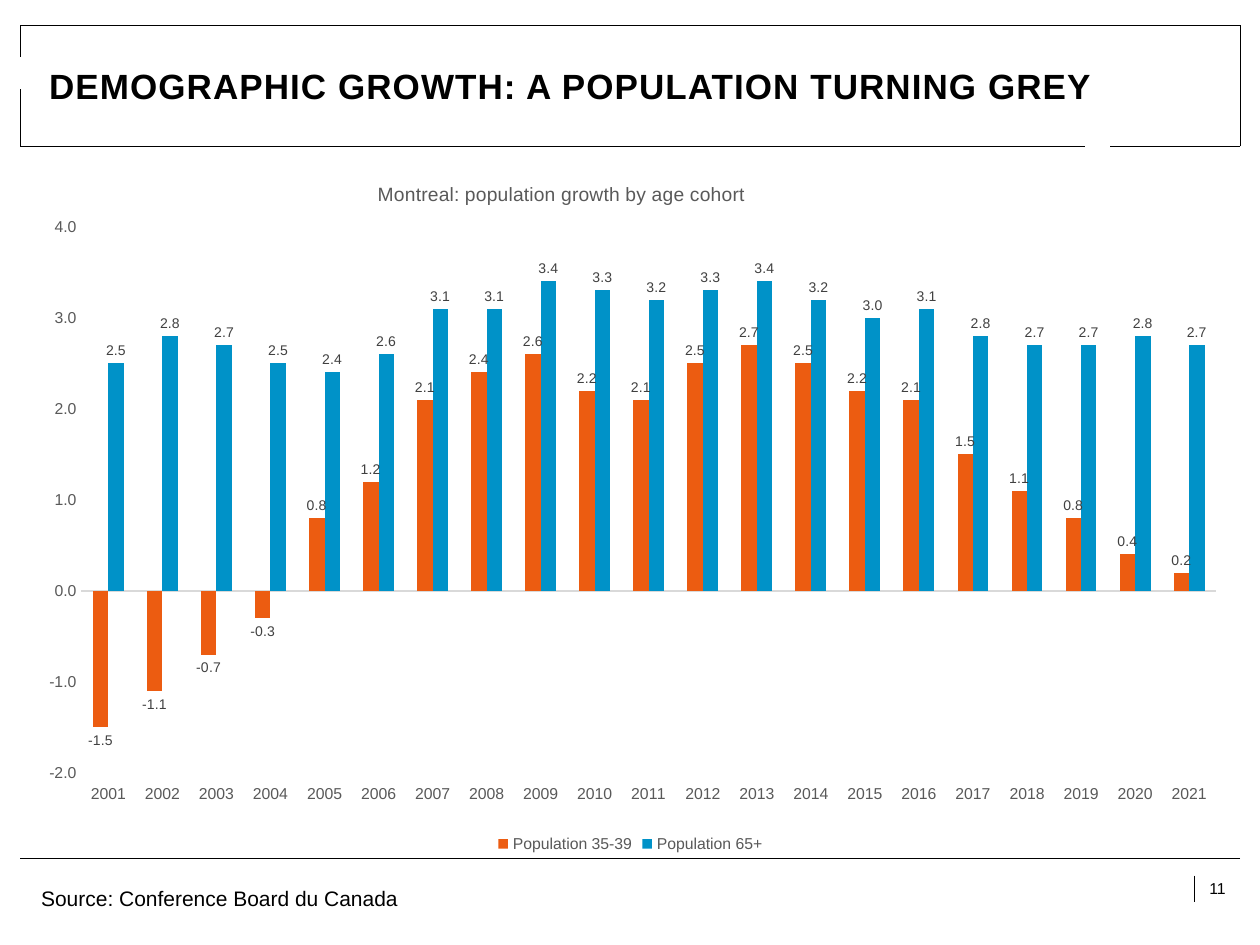
from lxml import etree
from pptx import Presentation
from pptx import util as u
from pptx.chart import data
from pptx.dml import color
from pptx.enum import chart as charts, shapes, text
from pptx.oxml import ns

COLORS = {"black": "000000", "grey": "595959", "label": "404040",
          "axis": "D9D9D9", "orange": "EC5C11", "blue": "0092C8"}
LEFT, RIGHT, TOP, BOTTOM, FOOTER = 0.41, 25, 0.51, 2.95, 17.3


def style_font(font, size, name):
    font.name = "Arial"
    font.size = u.Pt(size)
    font.color.rgb = color.RGBColor.from_string(COLORS[name])


def set_layout(element, inner=False, **fractions):
    for old in element.findall(ns.qn("c:layout")):
        element.remove(old)
    layout = etree.Element(ns.qn("c:layout"))
    manual = etree.SubElement(layout, ns.qn("c:manualLayout"))
    if inner:
        etree.SubElement(manual, ns.qn("c:layoutTarget"), val="inner")
    for side in "xy":
        etree.SubElement(manual, ns.qn(f"c:{side}Mode"), val="edge")
    for key, value in fractions.items():
        etree.SubElement(manual, ns.qn(f"c:{key}"), val=str(value))
    element.insert(0 if inner else 1, layout)


presentation = Presentation()
presentation.slide_width, presentation.slide_height = u.Cm(25.4), u.Cm(19.05)
slide = presentation.slides.add_slide(presentation.slide_layouts[5])

frame_lines = [
    (RIGHT, FOOTER, LEFT, FOOTER),
    (24.08, 17.65, 24.08, 18.19),
    (LEFT, BOTTOM, 21.87, BOTTOM),
    (LEFT, TOP, RIGHT, TOP),
    (LEFT, TOP, LEFT, 1.14),
    (LEFT, 1.8, LEFT, BOTTOM),
    (RIGHT, BOTTOM, RIGHT, TOP),
    (22.38, BOTTOM, RIGHT, BOTTOM),
]
for ends in frame_lines:
    line = slide.shapes.add_connector(
        shapes.MSO_CONNECTOR.STRAIGHT, *[u.Cm(end) for end in ends])
    line.line.color.rgb = color.RGBColor.from_string(COLORS["black"])
    line.line.width = u.Pt(0.75)
    etree.SubElement(line._element.spPr, ns.qn("a:effectLst"))

title = slide.shapes.title
title.left, title.top, title.width, title.height = [
    u.Cm(value) for value in (LEFT, TOP, 24.6, 2.42)]
frame = title.text_frame
frame.text = "DEMOGRAPHIC GROWTH: A POPULATION TURNING GREY"
frame.word_wrap = True
frame.auto_size = text.MSO_AUTO_SIZE.NONE
frame.vertical_anchor = text.MSO_ANCHOR.MIDDLE
frame.margin_left = frame.margin_right = u.Cm(0.58)
frame.margin_top = frame.margin_bottom = u.Cm(0.23)
paragraph = frame.paragraphs[0]
paragraph.alignment = text.PP_ALIGN.LEFT
style_font(paragraph.font, 20, "black")
paragraph.font.bold = True
paragraph.runs[0].font._element.set("spc", "60")

chart_data = data.CategoryChartData(number_format="#,##0.0")
chart_data.categories = [str(year) for year in range(2001, 2022)]
chart_data.add_series("Population 35-39", [
    -1.5, -1.1, -0.7, -0.3, 0.8, 1.2, 2.1, 2.4, 2.6, 2.2, 2.1,
    2.5, 2.7, 2.5, 2.2, 2.1, 1.5, 1.1, 0.8, 0.4, 0.2])
chart_data.add_series("Population 65+", [
    2.5, 2.8, 2.7, 2.5, 2.4, 2.6, 3.1, 3.1, 3.4, 3.3, 3.2,
    3.3, 3.4, 3.2, 3.0, 3.1, 2.8, 2.7, 2.7, 2.8, 2.7])
chart = slide.shapes.add_chart(
    charts.XL_CHART_TYPE.COLUMN_CLUSTERED,
    u.Cm(LEFT), u.Cm(3), u.Cm(24.6), u.Cm(14.3), chart_data).chart
style_font(chart.font, 10, "black")

chart.has_title = True
chart.chart_title.text_frame.text = "Montreal: population growth by age cohort"
title_font = chart.chart_title.text_frame.paragraphs[0].font
style_font(title_font, 11, "grey")
title_font.bold = False
set_layout(chart.chart_title._element, x=0.29, y=0.04)

chart.has_legend = True
chart.legend.position = charts.XL_LEGEND_POSITION.BOTTOM
chart.legend.include_in_layout = False
style_font(chart.legend.font, 9, "grey")

for axis in (chart.category_axis, chart.value_axis):
    axis.major_tick_mark = axis.minor_tick_mark = charts.XL_TICK_MARK.NONE
    axis.has_major_gridlines = False
    style_font(axis.tick_labels.font, 9, "grey")
chart.category_axis.tick_label_position = charts.XL_TICK_LABEL_POSITION.LOW
chart.category_axis.format.line.color.rgb = color.RGBColor.from_string(COLORS["axis"])
chart.category_axis.format.line.width = u.Pt(0.75)
value_axis = chart.value_axis
value_axis.minimum_scale, value_axis.maximum_scale, value_axis.major_unit = -2, 4, 1
value_axis.format.line.fill.background()
value_axis.tick_labels.number_format = "#,##0.0"
value_axis.tick_labels.number_format_is_linked = False

plot = chart.plots[0]
plot.vary_by_categories = False
plot.gap_width, plot.overlap = 150, 0
for series, name in zip(plot.series, ("orange", "blue")):
    series.invert_if_negative = False
    series.format.fill.solid()
    series.format.fill.fore_color.rgb = color.RGBColor.from_string(COLORS[name])
    labels = series.data_labels
    labels.show_value = True
    labels.position = charts.XL_LABEL_POSITION.OUTSIDE_END
    labels.number_format = "#,##0.0"
    labels.number_format_is_linked = False
    style_font(labels.font, 8, "label")
set_layout(plot._element.getparent(), inner=True, x=0.05, y=0.11, w=0.93, h=0.77)

source = slide.shapes.add_textbox(u.Cm(0.58), u.Cm(17.73), u.Cm(13.77), u.Cm(0.77))
source.text_frame.word_wrap = True
source.text_frame.auto_size = text.MSO_AUTO_SIZE.SHAPE_TO_FIT_TEXT
source.text_frame.text = "Source: Conference Board du Canada"
style_font(source.text_frame.paragraphs[0].font, 12, "black")

number = slide.shapes.add_textbox(u.Cm(24.1), u.Cm(17.32), u.Cm(0.89), u.Cm(1.19))
frame = number.text_frame
frame.word_wrap = True
frame.vertical_anchor = text.MSO_ANCHOR.MIDDLE
frame.margin_left = frame.margin_right = u.Cm(0.13)
frame.margin_top = frame.margin_bottom = u.Cm(0.13)
frame.text = "11"
frame.paragraphs[0].alignment = text.PP_ALIGN.CENTER
style_font(frame.paragraphs[0].font, 9, "black")

presentation.save("out.pptx")
